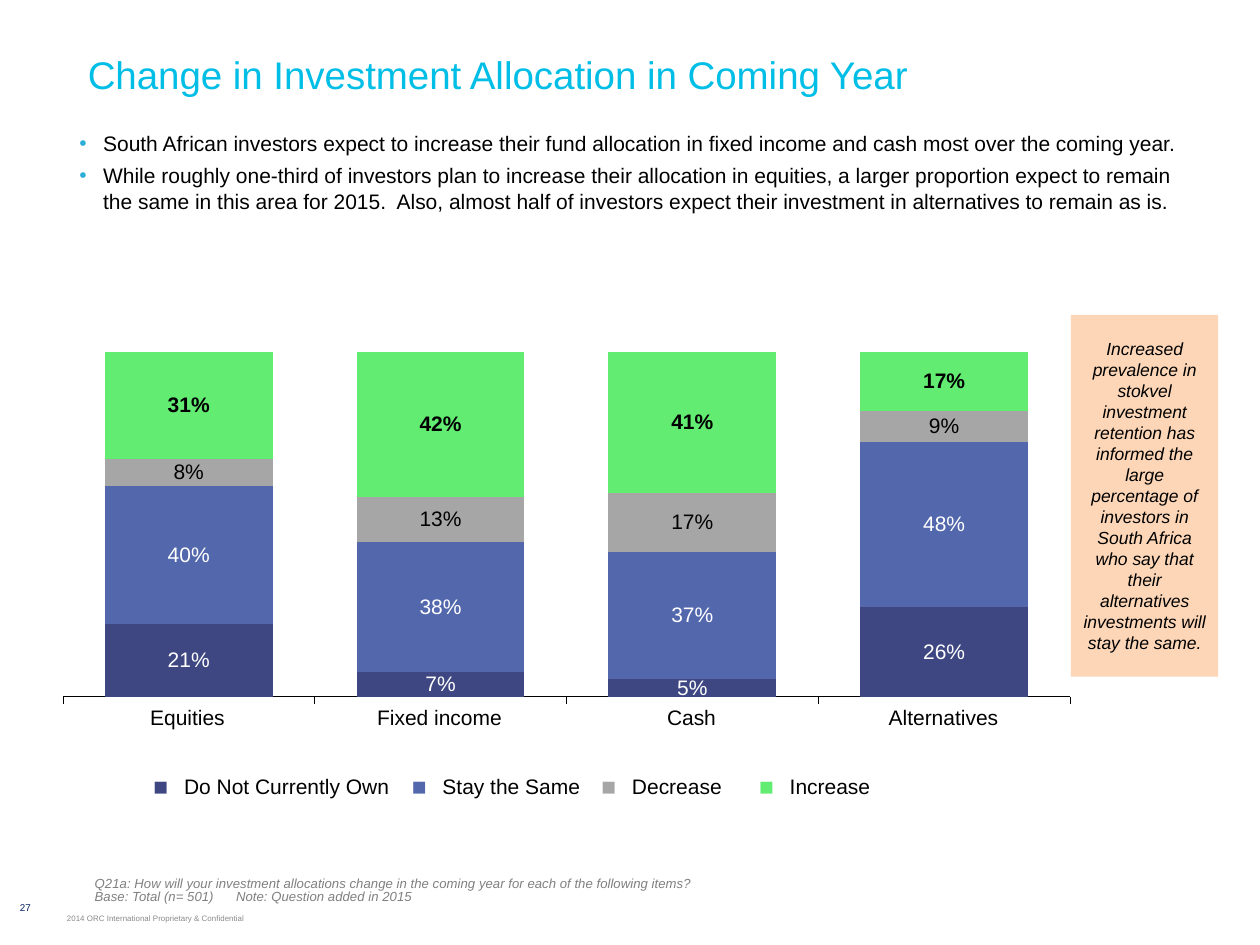
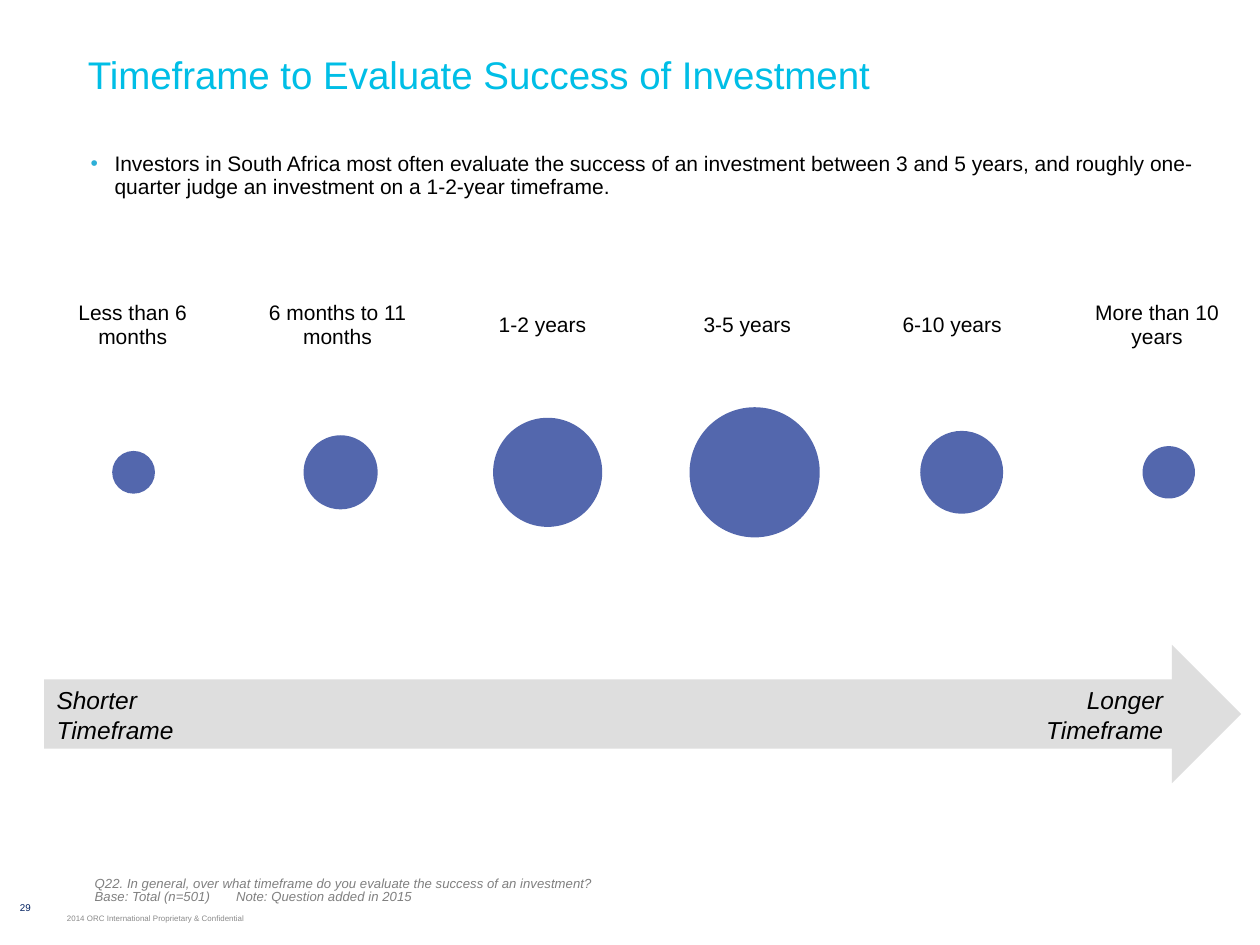
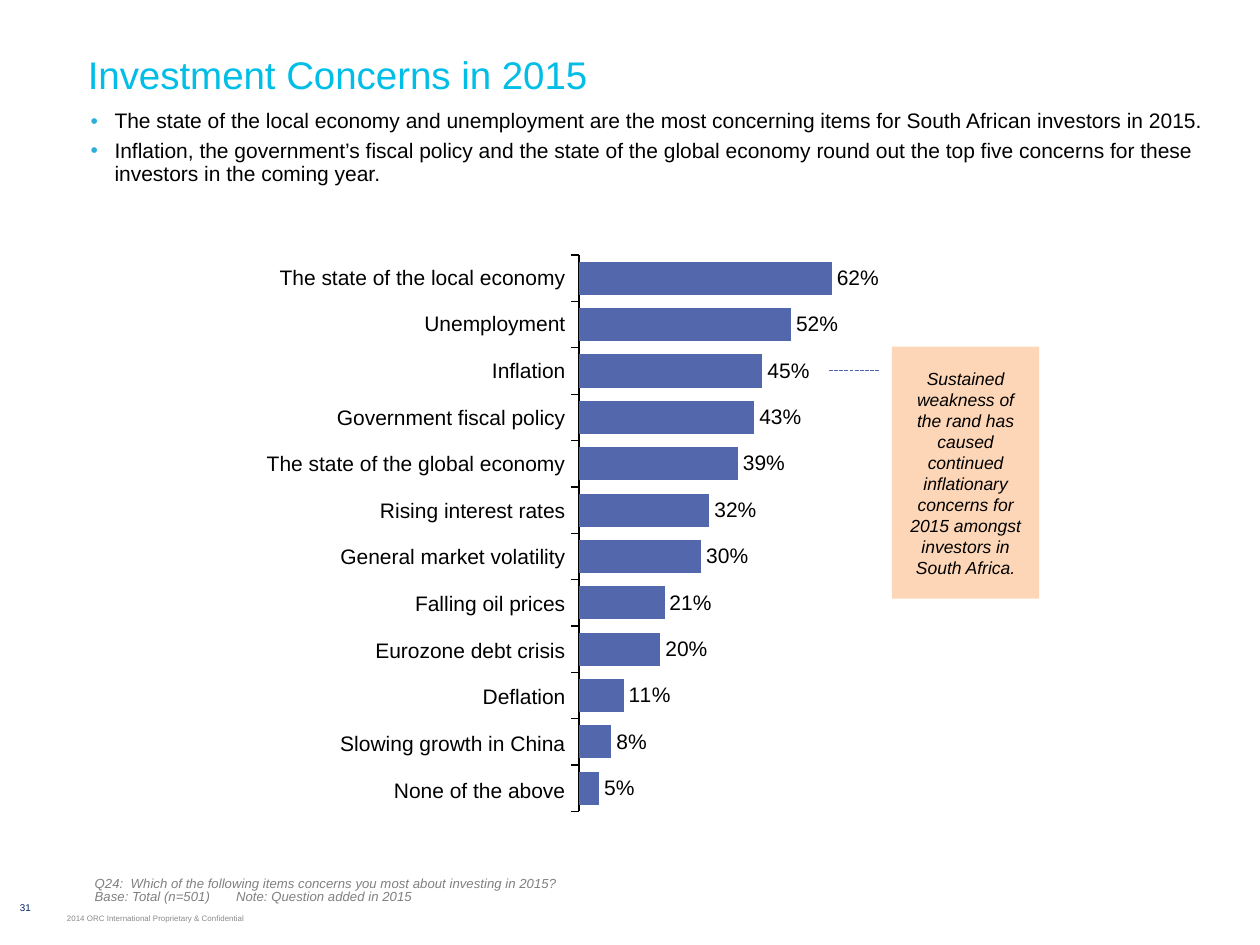
from pptx import Presentation, oxml
from pptx import util as u
from pptx.chart import data
from pptx.dml.color import RGBColor
from pptx.enum import chart as charts, dml, shapes, text
from pptx.oxml import ns

Cm, Pt = u.Cm, u.Pt

CYAN = RGBColor(0x00, 0xBE, 0xE6)
BLACK = RGBColor(0x00, 0x00, 0x00)
WHITE = RGBColor(0xFF, 0xFF, 0xFF)
DARK_BLUE = RGBColor(0x3E, 0x47, 0x82)
BLUE = RGBColor(0x53, 0x67, 0xAD)
GREY = RGBColor(0xA6, 0xA6, 0xA6)
GREEN = RGBColor(0x62, 0xEC, 0x72)
PEACH = RGBColor(0xFC, 0xD6, 0xB7)
PALE_GREY = RGBColor(0xDE, 0xDE, 0xDE)
NOTE_GREY = RGBColor(0x80, 0x80, 0x80)
FOOTER_GREY = RGBColor(0x89, 0x89, 0x89)
NAVY = RGBColor(0x00, 0x20, 0x60)
LINE_BLUE = RGBColor(0x4F, 0x64, 0xAB)

FONT = "Arial"
A = ns.nsdecls("a")
MIDDLE = text.MSO_ANCHOR.MIDDLE
CENTER = text.PP_ALIGN.CENTER
RIGHT = text.PP_ALIGN.RIGHT
NO_TABLE_STYLE = "{2D5ABB26-0587-4C30-8999-92F81FD0307C}"

SLIM = {"margin_left": 0, "margin_right": 0, "margin_top": Cm(0.08),
        "margin_bottom": Cm(0.08), "vertical_anchor": MIDDLE}
TIGHT = {"margin_left": Cm(0.03), "margin_right": Cm(0.03), "margin_top": Cm(0.03),
         "margin_bottom": Cm(0.03), "vertical_anchor": MIDDLE}
EVEN = {"margin_left": Cm(0.13), "margin_right": Cm(0.13)}
ROOMY = {"vertical_anchor": MIDDLE}

BULLET = [
    f'<a:buClr {A}><a:srgbClr val="2DAFD7"/></a:buClr>',
    f'<a:buFont {A} typeface="Arial"/>',
    f'<a:buChar {A} char="•"/>',
]
NOTE_TAB = [f'<a:tabLst {A}><a:tab pos="{Cm(2.85)}" algn="l"/></a:tabLst>']

TITLE = {"frame": ROOMY, "font": {"size": Pt(22)}, "color": CYAN}
NUMBER = {"frame": SLIM, "para": {"alignment": CENTER}, "font": {"size": Pt(5.6)}, "color": NAVY}
FOOTER = {"frame": SLIM, "font": {"size": Pt(4.5)}, "color": FOOTER_GREY}
NOTE = {"frame": {"margin_left": Cm(0.03), "vertical_anchor": text.MSO_ANCHOR.BOTTOM},
        "para": {"line_spacing": 0.8}, "font": {"size": Pt(7.5), "italic": True},
        "color": NOTE_GREY, "extras": NOTE_TAB}
BODY = {"frame": EVEN, "font": {"size": Pt(12)}, "extras": BULLET, "indent": Cm(0.48)}
CALLOUT = {"frame": ROOMY, "para": {"alignment": CENTER},
           "font": {"size": Pt(10), "italic": True}}
CATEGORY = {"frame": TIGHT, "para": {"alignment": CENTER}, "font": {"size": Pt(12)}}
CONCERN = {**CATEGORY, "para": {"alignment": RIGHT}}
TIMEFRAME = {**CATEGORY, "frame": ROOMY}
LEGEND = {"frame": {**TIGHT, "margin_left": Cm(0.15)}, "font": {"size": Pt(12)}}
MARKER = {**CATEGORY, "font": {"size": Pt(14)}}


def write(holder, lines, look):
    frame = getattr(holder, "text_frame", holder)
    for name, value in look["frame"].items():
        setattr(holder, name, value)
    for index, line in enumerate(lines):
        para = frame.add_paragraph() if index else frame.paragraphs[0]
        properties = para._p.get_or_add_pPr()
        if "indent" in look:
            properties.set("marL", str(look["indent"]))
            properties.set("indent", str(-look["indent"]))
        for extra in look.get("extras", []):
            properties.append(oxml.parse_xml(extra))
        for name, value in look.get("para", {}).items():
            setattr(para, name, value)
        span = para.add_run()
        span.text = line
        span.font.name = FONT
        span.font.color.rgb = look.get("color", BLACK)
        for name, value in look["font"].items():
            setattr(span.font, name, value)


def add_grid(page, left, top, widths, row_height, rows):
    grid = page.shapes.add_table(len(rows), len(widths), Cm(left), Cm(top),
                                 Cm(sum(widths)), Cm(row_height * len(rows))).table
    grid.first_row = grid.horz_banding = False
    grid._tbl.tblPr[0].text = NO_TABLE_STYLE
    for column, width in zip(grid.columns, widths):
        column.width = Cm(width)
    for row, entries in enumerate(rows):
        for column, (words, look) in enumerate(entries):
            cell = grid.cell(row, column)
            cell.fill.background()
            write(cell, [words], look)


deck = Presentation()
deck.slide_width, deck.slide_height = Cm(25.4), Cm(19.05)

topics = [
    {
        "number": "27",
        "title": "Change in Investment Allocation in Coming Year",
        "note": ["Q21a: How will your investment allocations change in the coming year for each of the following items?",
                 "Base: Total (n= 501) \tNote: Question added in 2015"],
        "place": (1.47, 2.51, 22.86, 1.93),
        "spacing": 1.0,
        "bullets": ["South African investors expect to increase their fund allocation in fixed income and cash most over the coming year.",
                    "While roughly one-third of investors plan to increase their allocation in equities, a larger proportion expect to remain the same in this area for 2015.  Also, almost half of investors expect their investment in alternatives to remain as is."],
    },
    {
        "number": "29",
        "title": "Timeframe to Evaluate Success of Investment",
        "note": ["Q22. In general, over what timeframe do you evaluate the success of an investment?",
                 "Base: Total (n=501)\tNote: Question added in 2015"],
        "place": (1.7, 2.97, 23.29, 1.65),
        "spacing": 0.9,
        "bullets": ["Investors in South Africa most often evaluate the success of an investment between 3 and 5 years, and roughly one-quarter judge an investment on a 1-2-year timeframe."],
    },
    {
        "number": "31",
        "title": "Investment Concerns in 2015",
        "note": ["Q24:  Which of the following items concerns you most about investing in 2015?",
                 "Base: Total (n=501)\tNote: Question added in 2015"],
        "place": (1.7, 2.11, 22.86, 1.93),
        "spacing": 0.9,
        "bullets": ["The state of the local economy and unemployment are the most concerning items for South African investors in 2015.",
                    "Inflation, the government’s fiscal policy and the state of the global economy round out the top five concerns for these investors in the coming year."],
    },
]

pages = []
for topic in topics:
    page = deck.slides.add_slide(deck.slide_layouts[6])
    pages.append(page)
    body = {**BODY, "para": {"line_spacing": topic["spacing"], "space_before": Pt(0),
                             "space_after": Pt(4)}}
    for place, lines, look in [
        ((0, 17.78, 1.02, 1.02), [topic["number"]], NUMBER),
        ((1.35, 18.26, 6.53, 0.51), ["2014 ORC International Proprietary & Confidential"], FOOTER),
        ((1.52, 0.64, 22.86, 1.7), [topic["title"]], TITLE),
        ((1.88, 17.25, 19.79, 1.09), topic["note"], NOTE),
        (topic["place"], topic["bullets"], body),
    ]:
        box = page.shapes.add_textbox(*map(Cm, place))
        box.text_frame.word_wrap = True
        write(box.text_frame, lines, look)

allocation_page, timeframe_page, concerns_page = pages

allocations = [
    ("Do Not Currently Own", (0.21, 0.07, 0.05, 0.26), DARK_BLUE, WHITE, 4.57),
    ("Stay the Same", (0.4, 0.38, 0.37, 0.48), BLUE, WHITE, 3.18),
    ("Decrease", (0.08, 0.13, 0.17, 0.09), GREY, BLACK, 2.54),
    ("Increase", (0.31, 0.42, 0.41, 0.17), GREEN, BLACK, 2.54),
]
assets = ["Equities", "Fixed income", "Cash", "Alternatives"]
timeframes = [
    ("Less than 6 months", 0.04),
    ("6 months to 11 months", 0.12),
    ("1-2 years", 0.26),
    ("3-5 years", 0.37),
    ("6-10 years", 0.15),
    ("More than 10 years", 0.06),
]
concerns = [
    ("The state of the local economy", 0.62),
    ("Unemployment", 0.52),
    ("Inflation", 0.45),
    ("Government fiscal policy", 0.43),
    ("The state of the global economy", 0.39),
    ("Rising interest rates", 0.32),
    ("General market volatility", 0.3),
    ("Falling oil prices", 0.21),
    ("Eurozone debt crisis", 0.2),
    ("Deflation", 0.11),
    ("Slowing growth in China", 0.08),
    ("None of the above", 0.05),
]

allocation_data = data.CategoryChartData(number_format="0%")
allocation_data.categories = assets
for name, values, *rest in allocations:
    allocation_data.add_series(name, values)

timeframe_data = data.BubbleChartData()
bubbles = timeframe_data.add_series("Timeframe")
for position, (name, share) in enumerate(timeframes, 1):
    bubbles.add_data_point(position, 100, share)

concern_data = data.CategoryChartData(number_format="0%")
concern_data.categories = [name for name, share in concerns]
concern_data.add_series("Concerned", [share for name, share in concerns])

KIND = charts.XL_CHART_TYPE
drawn = []
for page, kind, place, values, inner in [
    (allocation_page, KIND.COLUMN_STACKED_100, (-0.43, 6.5, 22.07, 8.31), allocation_data,
     (0.077, 0.072, 0.92, 0.836)),
    (timeframe_page, KIND.BUBBLE, (0.25, 3.89, 25.4, 11.28), timeframe_data,
     (0.014, 0.034, 0.986, 0.931)),
    (concerns_page, KIND.BAR_CLUSTERED, (11.38, 4.7, 10.31, 12.01), concern_data,
     (0.028, 0.037, 0.798, 0.934)),
]:
    chart = page.shapes.add_chart(kind, *map(Cm, place), values).chart
    drawn.append(chart)
    chart.has_title = chart.has_legend = False
    for name, value in {"name": FONT, "size": Pt(12)}.items():
        setattr(chart.font, name, value)
    chart.font.color.rgb = BLACK
    for axis in (chart.category_axis, chart.value_axis):
        axis.has_major_gridlines = False
    chart.value_axis.visible = False
    area = chart._chartSpace.chart.plotArea
    for layout in area.findall(ns.qn("c:layout")):
        area.remove(layout)
    sides = "".join(f'<c:{side} val="{value}"/>' for side, value in zip("xywh", inner))
    area.insert(0, oxml.parse_xml(
        f'<c:layout {ns.nsdecls("c")}><c:manualLayout><c:layoutTarget val="inner"/>'
        f'<c:xMode val="edge"/><c:yMode val="edge"/>{sides}</c:manualLayout></c:layout>'))

allocation_chart, timeframe_chart, concern_chart = drawn

POSITION = charts.XL_LABEL_POSITION
for chart, gap, overlap, weight, position, styles in [
    (allocation_chart, 50, 100, 0.25, POSITION.CENTER,
     [(fill, ink) for name, values, fill, ink, width in allocations]),
    (concern_chart, 40, -25, 0.75, POSITION.OUTSIDE_END, [(BLUE, BLACK)]),
]:
    plot = chart.plots[0]
    plot.vary_by_categories = False
    plot.gap_width, plot.overlap = gap, overlap
    chart.value_axis.minimum_scale, chart.value_axis.maximum_scale = 0, 1
    axis = chart.category_axis
    axis.tick_label_position = charts.XL_TICK_LABEL_POSITION.NONE
    axis.major_tick_mark = charts.XL_TICK_MARK.OUTSIDE
    axis.format.line.color.rgb = BLACK
    axis.format.line.width = Pt(weight)
    for series, (fill, ink) in zip(plot.series, styles):
        series.format.fill.solid()
        series.format.fill.fore_color.rgb = fill
        labels = series.data_labels
        for name, value in {"show_value": True, "number_format": "0%",
                            "number_format_is_linked": False, "position": position}.items():
            setattr(labels, name, value)
        for name, value in {"name": FONT, "size": Pt(12), "bold": fill == GREEN}.items():
            setattr(labels.font, name, value)
        labels.font.color.rgb = ink
concern_chart.category_axis.reverse_order = True

timeframe_chart.category_axis.visible = False
for axis, low, high in [(timeframe_chart.category_axis, 0.5, 6.5),
                        (timeframe_chart.value_axis, 50, 150)]:
    axis.minimum_scale, axis.maximum_scale = low, high
bubble_fill = timeframe_chart.plots[0].series[0].format.fill
bubble_fill.solid()
bubble_fill.fore_color.rgb = BLUE

legend_widths, legend_entries = [], []
for name, values, fill, ink, width in allocations:
    legend_widths += [0.64, width]
    legend_entries += [("■", {**MARKER, "color": fill}), (name, LEGEND)]
add_grid(allocation_page, 2.92, 15.54, legend_widths, 0.64, [legend_entries])
add_grid(allocation_page, 1.24, 14.1, [5.08] * 4, 0.76, [[(name, CATEGORY) for name in assets]])
add_grid(timeframe_page, 0.61, 5.92, [4.13] * 6, 1.27,
         [[(name, TIMEFRAME) for name, share in timeframes]])
add_grid(concerns_page, 2.13, 5.13, [9.3], 0.94, [[(name, CONCERN)] for name, share in concerns])

for page, kind, place, fill, lines in [
    (allocation_page, shapes.MSO_SHAPE.RECTANGLE, (21.59, 6.35, 2.97, 7.29), PEACH,
     ["Increased prevalence in stokvel investment retention has informed the large percentage of investors in South Africa who say that their alternatives investments will stay the same."]),
    (timeframe_page, shapes.MSO_SHAPE.RIGHT_ARROW, (0.89, 13, 24.13, 2.79), PALE_GREY, []),
    (concerns_page, shapes.MSO_SHAPE.RECTANGLE, (17.98, 6.99, 2.97, 5.08), PEACH,
     ["Sustained weakness of the rand has caused continued inflationary concerns for 2015 amongst investors in South Africa."]),
]:
    shape = page.shapes.add_shape(kind, *map(Cm, place))
    shape.shadow.inherit = False
    shape.fill.solid()
    shape.fill.fore_color.rgb = fill
    shape.line.fill.background()
    shape.text_frame.word_wrap = True
    write(shape.text_frame, lines, CALLOUT)

for left, width, words, alignment in [
    (0.89, 4.42, "Shorter Timeframe", text.PP_ALIGN.LEFT),
    (19.53, 4.17, "Longer Timeframe", RIGHT),
]:
    box = timeframe_page.shapes.add_textbox(Cm(left), Cm(13.69), Cm(width), Cm(1.45))
    box.text_frame.word_wrap = True
    write(box.text_frame, [words], {"frame": {}, "para": {"alignment": alignment},
                                    "font": {"size": Pt(14), "italic": True}})

leader = concerns_page.shapes.add_connector(shapes.MSO_CONNECTOR.STRAIGHT,
                                            Cm(16.71), Cm(7.47), Cm(17.73), Cm(7.47))
leader.line.color.rgb = LINE_BLUE
leader.line.width = Pt(0.75)
leader.line.dash_style = dml.MSO_LINE.SQUARE_DOT
leader._element.spPr.append(oxml.parse_xml(f"<a:effectLst {A}/>"))

deck.save("out.pptx")
